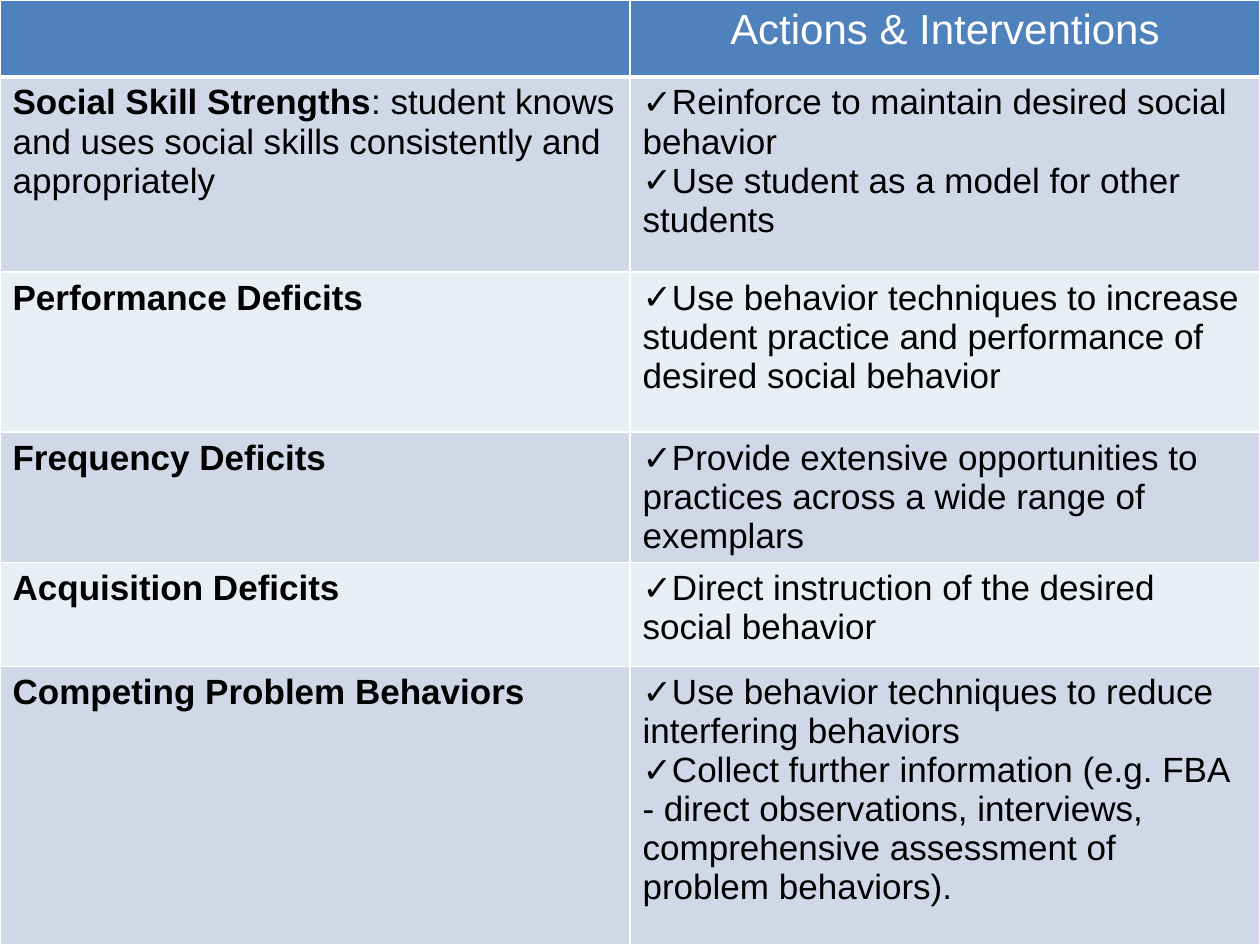
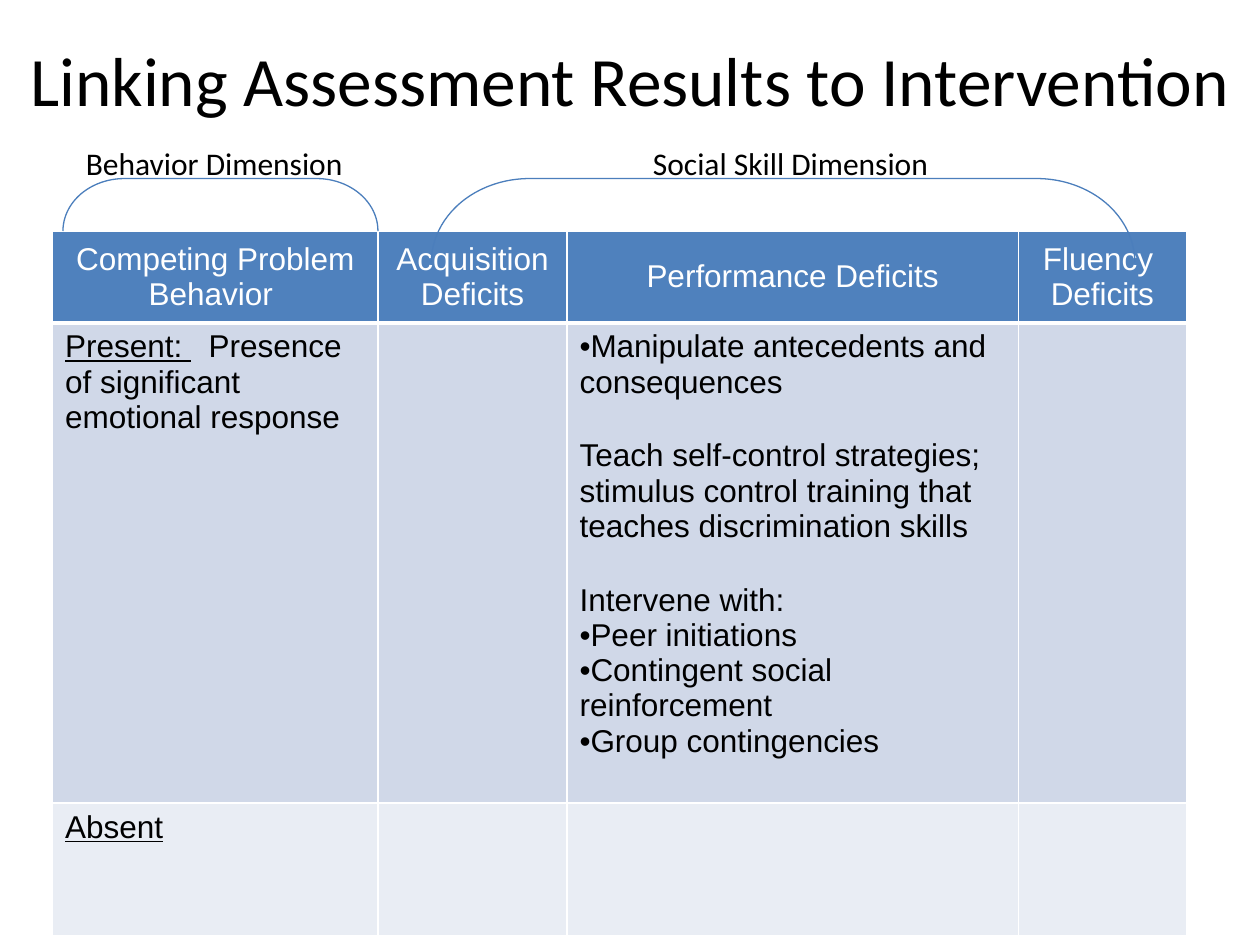
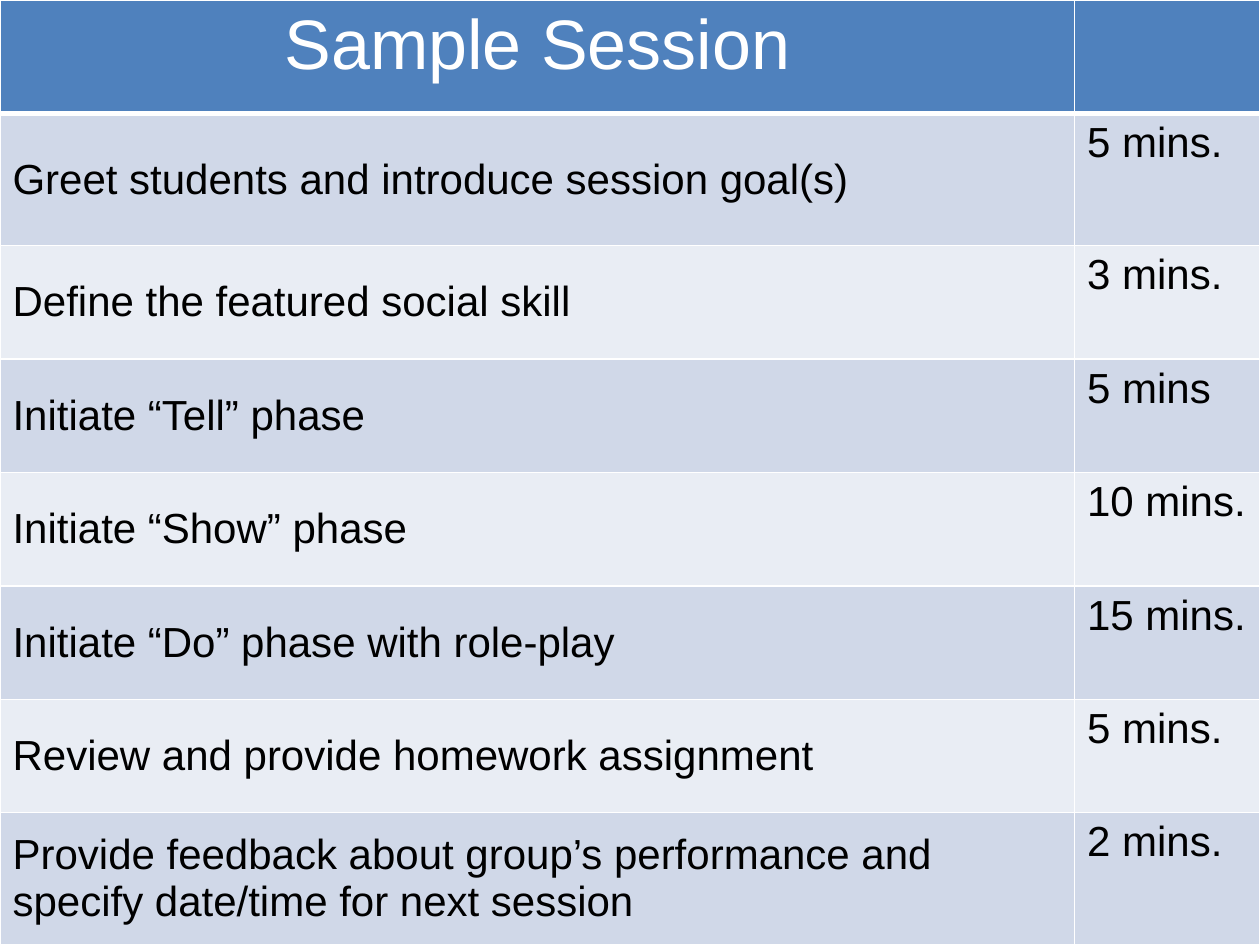
from dataclasses import dataclass
from itertools import accumulate

from lxml.etree import SubElement
from pptx import Presentation
from pptx.dml.color import RGBColor as Rgb
from pptx.enum.shapes import MSO_SHAPE as Shape
from pptx.enum.text import MSO_ANCHOR as Anchor, PP_ALIGN as Align
from pptx.oxml.ns import qn
from pptx.util import Pt


@dataclass(frozen=True)
class Theme:
    header: Rgb = Rgb.from_string("4F81BD")
    bands: tuple = (Rgb.from_string("D0D8E8"), Rgb.from_string("E9EDF4"))
    white: Rgb = Rgb.from_string("FFFFFF")
    black: Rgb = Rgb.from_string("000000")
    bracket: Rgb = Rgb.from_string("4B7EBC")
    table_font: str = "Arial"
    slide_font: str = "Calibri"
    title_size: float = 39.6
    session_size: int = 40
    large_size: int = 24
    medium_size: int = 20
    small_size: int = 18
    rule: int = 1
    header_rule: int = 3


theme = Theme()


def style_run(span, font_name, size, color):
    span.font.name = font_name
    span.font.size = Pt(size)
    span.font.color.rgb = color
    span.font.bold = False


def add_grid(slide, left, top, widths, heights, rows, header_size, body_size, lead_style="bold"):
    frame = slide.shapes.add_table(
        len(heights), len(widths), Pt(left), Pt(top), Pt(sum(widths)), Pt(sum(heights))
    )
    table = frame.table
    for column, width in zip(table.columns, widths):
        column.width = Pt(width)
    for row_index, (row, height, texts) in enumerate(zip(table.rows, heights, rows)):
        row.height = Pt(height)
        is_header = row_index == 0
        for cell, paragraphs in zip(row.cells, texts):
            properties = cell._tc.get_or_add_tcPr()
            for side in ("lnL", "lnR", "lnT", "lnB"):
                weight = theme.header_rule if is_header and side == "lnB" else theme.rule
                line = SubElement(properties, qn(f"a:{side}"), w=str(Pt(weight)))
                solid = SubElement(line, qn("a:solidFill"))
                SubElement(solid, qn("a:srgbClr"), val=str(theme.white))
            cell.fill.solid()
            cell.fill.fore_color.rgb = theme.header if is_header else theme.bands[(row_index - 1) % 2]
            for index, text in enumerate(paragraphs):
                para = cell.text_frame.paragraphs[0] if index == 0 else cell.text_frame.add_paragraph()
                if is_header:
                    para.alignment = Align.CENTER
                if text[0] in "✓•":
                    settings = para._p.get_or_add_pPr()
                    SubElement(settings, qn("a:buFont"), typeface=theme.table_font)
                    SubElement(settings, qn("a:buChar"), char=text[0])
                    text = text[1:]
                lead, divider, rest = text.partition("|")
                para.text = lead
                if rest:
                    para.add_run().text = rest
                for span in para.runs:
                    style_run(
                        span,
                        theme.table_font,
                        header_size if is_header else body_size,
                        theme.white if is_header else theme.black,
                    )
                if divider:
                    setattr(para.runs[0].font, lead_style, True)
    return table


deck = Presentation()
deck.slide_width, deck.slide_height = Pt(720), Pt(540)
title_only, blank = deck.slide_layouts[5], deck.slide_layouts[6]

actions_page = deck.slides.add_slide(blank)
actions_rows = [
    ([], ["Actions & Interventions"]),
    (
        ["Social Skill Strengths|: student knows and uses social skills consistently and appropriately"],
        ["✓Reinforce to maintain desired social behavior", "✓Use student as a model for other students"],
    ),
    (
        ["Performance Deficits|"],
        ["✓Use behavior techniques to increase student practice and performance of desired social behavior"],
    ),
    (
        ["Frequency Deficits|"],
        ["✓Provide extensive opportunities to practices across a wide range of exemplars"],
    ),
    (["Acquisition Deficits|"], ["✓Direct instruction of the desired social behavior"]),
    (
        ["Competing Problem Behaviors|"],
        [
            "✓Use behavior techniques to reduce interfering behaviors",
            "✓Collect further information (e.g. FBA - direct observations, interviews, "
            "comprehensive assessment of problem behaviors).",
        ],
    ),
]
add_grid(
    actions_page, 0, 0, [360, 360], [44, 111.5, 91.5, 74.5, 59.5, 159],
    actions_rows, theme.large_size, theme.medium_size,
)

linking_page = deck.slides.add_slide(title_only)
title = linking_page.shapes.title
title.left, title.top, title.width, title.height = Pt(0), Pt(0), Pt(720), Pt(90)
title.text_frame.text = "Linking Assessment Results to Intervention"
title.text_frame.vertical_anchor = Anchor.MIDDLE
title_para = title.text_frame.paragraphs[0]
title_para.alignment = Align.CENTER
style_run(title_para.runs[0], theme.slide_font, theme.title_size, theme.black)

linking_rows = [
    (
        ["Competing Problem Behavior "],
        ["Acquisition Deficits"],
        ["Performance Deficits"],
        ["Fluency ", "Deficits"],
    ),
    (
        ["Present: |\tPresence of significant emotional response"],
        [],
        [
            "•Manipulate antecedents and consequences",
            "Teach self-control strategies; stimulus control training that teaches discrimination skills",
            "Intervene with:",
            "•Peer initiations",
            "•Contingent social reinforcement",
            "•Group contingencies",
        ],
        [],
    ),
    (["Absent|"], [], [], []),
]
linking_table = add_grid(
    linking_page, 30, 132, [186, 108, 258, 96], [52.5, 274.5, 76],
    linking_rows, theme.small_size, theme.small_size, "underline",
)
for cell in linking_table.rows[0].cells:
    cell.vertical_anchor = Anchor.MIDDLE
for para in linking_table.cell(1, 2).text_frame.paragraphs[1:3]:
    para.space_before = Pt(22)
present_para = linking_table.cell(1, 0).text_frame.paragraphs[0]
tab_stops = SubElement(present_para._p.get_or_add_pPr(), qn("a:tabLst"))
SubElement(tab_stops, qn("a:tab"), pos=str(Pt(82)), algn="l")

dimensions = [
    ("Social Skill Dimension", 366, 228, True, 246.5, 402, 48),
    ("Behavior Dimension", 42, 163, False, 36, 180, 30),
]
for text, left, width, wraps, bracket_left, span_width, depth in dimensions:
    box = linking_page.shapes.add_textbox(Pt(left), Pt(79), Pt(width), Pt(29))
    box.text_frame.word_wrap = wraps
    box.text_frame.text = text
    style_run(box.text_frame.paragraphs[0].runs[0], theme.slide_font, theme.small_size, theme.black)

    turn = (span_width - depth) / 2
    bracket = linking_page.shapes.add_shape(
        Shape.RIGHT_BRACKET, Pt(bracket_left + turn), Pt(102 - turn), Pt(depth), Pt(span_width)
    )
    bracket.rotation = 270
    bracket.adjustments[0] = 1.17
    bracket.shadow.inherit = False
    bracket.fill.background()
    bracket.line.color.rgb = theme.bracket
    bracket.line.width = Pt(0.75)

session_page = deck.slides.add_slide(blank)
session_steps = [
    ("Greet students and introduce session goal(s)", "5 mins."),
    ("Define the featured social skill", "3 mins."),
    ("Initiate “Tell” phase", "5 mins"),
    ("Initiate “Show” phase", "10 mins."),
    ("Initiate “Do” phase with role-play", "15 mins."),
    ("Review and provide homework assignment", "5 mins."),
    ("Provide feedback about group’s performance and specify date/time for next session", "2 mins."),
]
session_rows = [(["Sample Session"], [])] + [([step], [duration]) for step, duration in session_steps]
session_table = add_grid(
    session_page, 0, 0, [614, 106], [64.8, 75.6] + [64.8] * 5 + [75.6],
    session_rows, theme.session_size, theme.large_size,
)
for row_index in range(1, len(session_rows)):
    session_table.cell(row_index, 0).vertical_anchor = Anchor.MIDDLE

deck.save("out.pptx")
